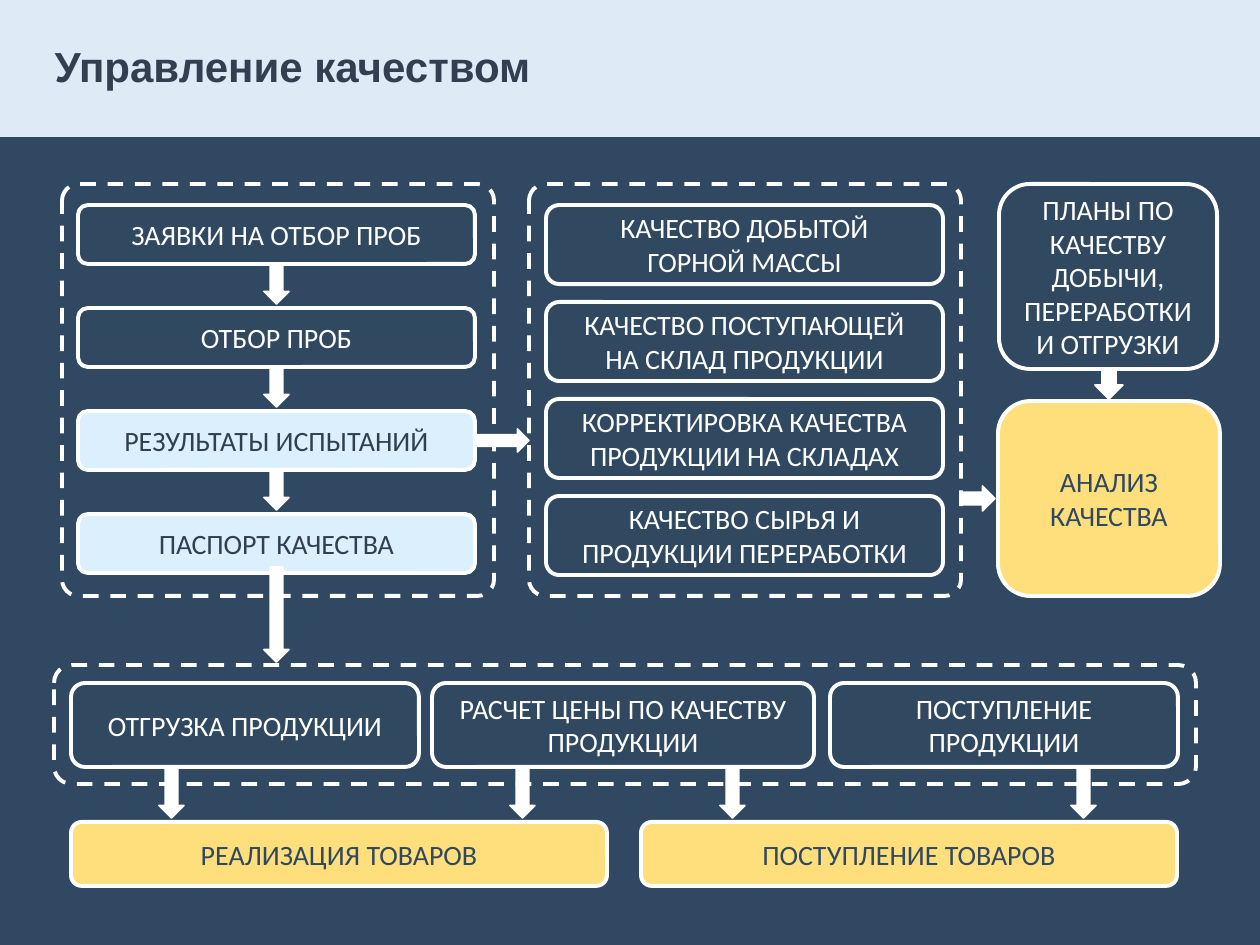
from pptx import Presentation
from pptx.dml.color import RGBColor
from pptx.enum.dml import MSO_LINE
from pptx.enum.shapes import MSO_SHAPE
from pptx.enum.text import MSO_ANCHOR, MSO_AUTO_SIZE, PP_ALIGN
from pptx.util import Emu, Pt

EMU_PER_PX = 914400 / 126
WHITE = "FFFFFF"
NAVY = "304861"
PANEL = "304961"
INK = "333F50"
PALE = "DBF0FC"
YELLOW = "FFDF7C"
HEADER = "DEEBF7"

TITLE_FRAME = {
    "word_wrap": True,
    "auto_size": MSO_AUTO_SIZE.NONE,
    "vertical_anchor": MSO_ANCHOR.MIDDLE,
}
TITLE_PARAGRAPH = {"alignment": PP_ALIGN.LEFT, "line_spacing": 0.9}
TITLE_FONT = {"name": "Arial", "size": Pt(24), "bold": True}
BOX_FRAME = {"word_wrap": True, "vertical_anchor": MSO_ANCHOR.MIDDLE}
BOX_PARAGRAPH = {"alignment": PP_ALIGN.CENTER}
BOX_FONT = {"name": "Calibri", "size": Pt(16)}


def color(value):
    return RGBColor.from_string(value)


def lengths(*pixels):
    return [Emu(round(pixel * EMU_PER_PX)) for pixel in pixels]


def set_values(target, values):
    for name, value in values.items():
        setattr(target, name, value)


class QualitySlide:
    def __init__(self, presentation):
        self.slide = presentation.slides.add_slide(presentation.slide_layouts[5])
        background = self.slide.background.fill
        background.solid()
        background.fore_color.rgb = color(NAVY)

    def shape(self, kind, area, fill=None, line=None, width=2.25):
        shape = self.slide.shapes.add_shape(kind, *lengths(*area))
        shape.shadow.inherit = False
        if fill:
            shape.fill.solid()
            shape.fill.fore_color.rgb = color(fill)
        else:
            shape.fill.background()
        if line:
            shape.line.color.rgb = color(line)
            shape.line.width = Pt(width)
        else:
            shape.line.fill.background()
        return shape

    def label(self, shape, text, ink, frame, paragraph_format, font):
        shape.text_frame.text = text
        set_values(shape.text_frame, frame)
        paragraph = shape.text_frame.paragraphs[0]
        set_values(paragraph, paragraph_format)
        for run in paragraph.runs:
            set_values(run.font, font)
            run.font.color.rgb = color(ink)

    def header(self, area):
        header = self.shape(MSO_SHAPE.RECTANGLE, area, HEADER)
        self.slide.shapes.title.element.addprevious(header.element)

    def title(self, text, area):
        title = self.slide.shapes.title
        set_values(title, dict(zip(("left", "top", "width", "height"), lengths(*area))))
        self.label(title, text, INK, TITLE_FRAME, TITLE_PARAGRAPH, TITLE_FONT)

    def box(self, text, area, fill=PANEL, ink=WHITE):
        box = self.shape(MSO_SHAPE.ROUNDED_RECTANGLE, area, fill, WHITE)
        self.label(box, text, ink, BOX_FRAME, BOX_PARAGRAPH, BOX_FONT)

    def frame(self, area, rounding):
        frame = self.shape(MSO_SHAPE.ROUNDED_RECTANGLE, area, line=WHITE)
        frame.adjustments[0] = rounding
        frame.line.dash_style = MSO_LINE.DASH

    def arrow(self, area, kind=MSO_SHAPE.DOWN_ARROW):
        self.shape(kind, area, WHITE, WHITE, 1)


def main():
    presentation = Presentation()
    presentation.slide_width, presentation.slide_height = lengths(1260, 945)
    page = QualitySlide(presentation)
    page.header((0, 0, 1260, 137))
    page.title("Управление качеством", (42, 20, 764, 98))

    for left in (62, 529):
        page.frame((left, 184, 432, 412), 0.04)
    page.frame((54, 665, 1142, 119), 0.15)

    samples = [
        ("ЗАЯВКИ НА ОТБОР ПРОБ", PANEL, WHITE),
        ("ОТБОР ПРОБ", PANEL, WHITE),
        ("РЕЗУЛЬТАТЫ ИСПЫТАНИЙ", PALE, INK),
        ("ПАСПОРТ КАЧЕСТВА", PALE, INK),
    ]
    for row, (text, fill, ink) in enumerate(samples):
        top = 205 + 103 * row
        page.box(text, (78, top, 397, 59), fill, ink)
        if row < len(samples) - 1:
            page.arrow((264, top + 60, 25, 39))

    stocks = [
        "КАЧЕСТВО ДОБЫТОЙ\vГОРНОЙ МАССЫ",
        "КАЧЕСТВО ПОСТУПАЮЩЕЙ\vНА СКЛАД ПРОДУКЦИИ",
        "КОРРЕКТИРОВКА КАЧЕСТВА ПРОДУКЦИИ НА СКЛАДАХ",
        "КАЧЕСТВО СЫРЬЯ И ПРОДУКЦИИ ПЕРЕРАБОТКИ",
    ]
    for row, text in enumerate(stocks):
        page.box(text, (546, 205 + 97 * row, 397, 79))

    page.box("ПЛАНЫ ПО КАЧЕСТВУ ДОБЫЧИ, ПЕРЕРАБОТКИ И ОТГРУЗКИ", (999, 184, 218, 185))
    page.box("АНАЛИЗ КАЧЕСТВА", (998, 401, 222, 195), YELLOW, NAVY)

    operations = [
        ("ОТГРУЗКА ПРОДУКЦИИ", 71, 348),
        ("РАСЧЕТ ЦЕНЫ ПО КАЧЕСТВУ ПРОДУКЦИИ", 432, 382),
        ("ПОСТУПЛЕНИЕ ПРОДУКЦИИ", 830, 348),
    ]
    for text, left, width in operations:
        page.box(text, (left, 683, width, 84))
    for text, left in (("РЕАЛИЗАЦИЯ ТОВАРОВ", 71), ("ПОСТУПЛЕНИЕ ТОВАРОВ", 641)):
        page.box(text, (left, 822, 536, 64), YELLOW, NAVY)

    for left in (159, 510, 720, 1071):
        page.arrow((left, 769, 25, 49))
    page.arrow((264, 567, 25, 95))
    page.arrow((1095, 369, 28, 30))
    for area in ((477, 429, 52, 23), (960, 486, 35, 25)):
        page.arrow(area, MSO_SHAPE.RIGHT_ARROW)

    presentation.save("out.pptx")


if __name__ == "__main__":
    main()
